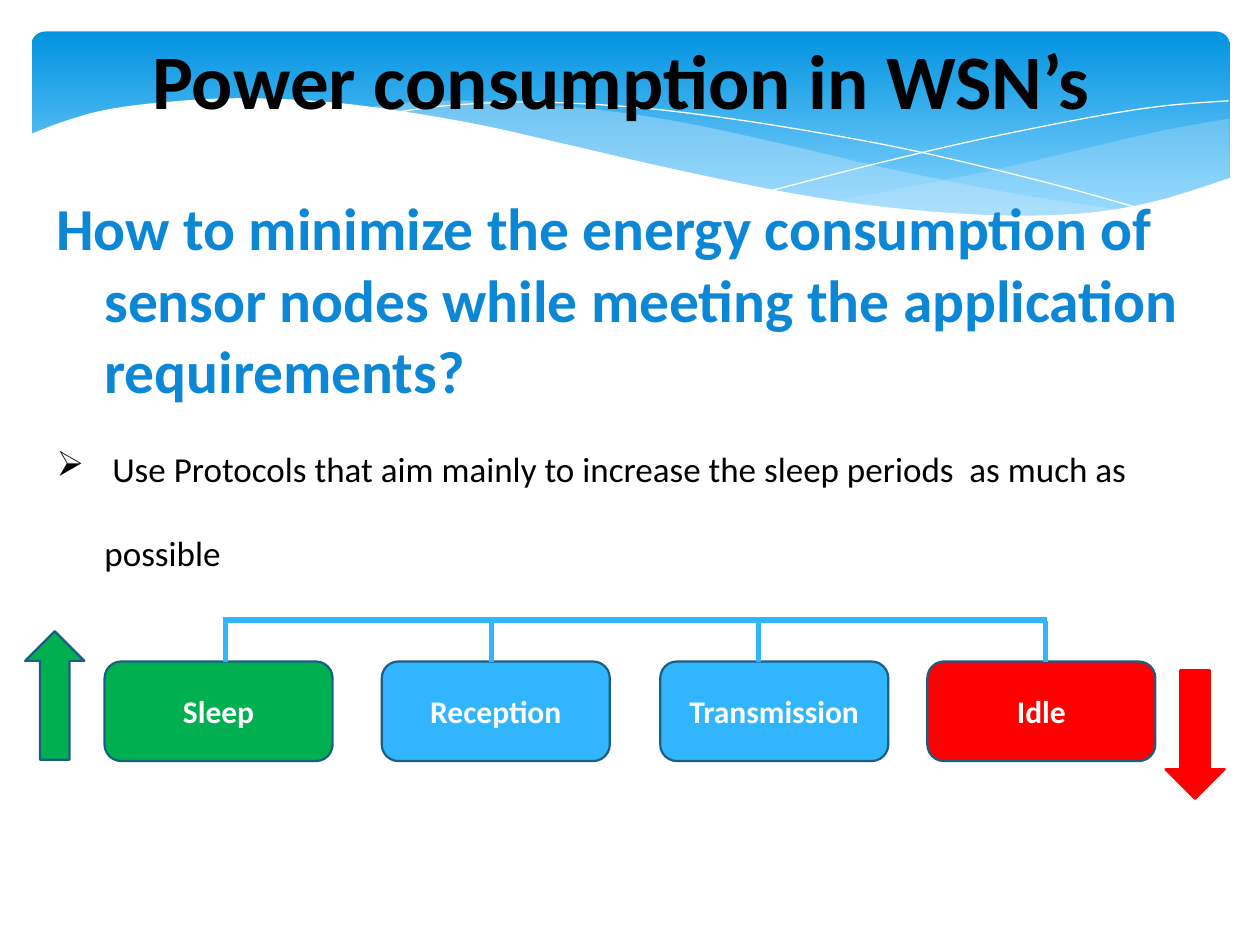
import pptx
import pptx.util
import pptx.dml.color
import pptx.enum.shapes
import pptx.enum.text
import pptx.oxml
import pptx.oxml.ns

THEME = {
    "font": "Calibri",
    "black": "000000", "white": "FFFFFF", "heading": "0B87D6",
    "sky": "31B6FD", "outline": "195F84", "green": "00B050", "red": "FF0000",
    "band_top": "0293E0", "band_bottom": "83D3FE", "wave": "C6E7FC",
    "title": 44, "question": 34, "body": 20, "label": 18,
}
SHAPE = pptx.enum.shapes.MSO_SHAPE
ALIGN = pptx.enum.text.PP_ALIGN
ANCHOR = pptx.enum.text.MSO_ANCHOR
RGB = pptx.dml.color.RGBColor.from_string
Pt = pptx.util.Pt

prs = pptx.Presentation()
prs.slide_width, prs.slide_height = pptx.util.Inches(10), pptx.util.Inches(7.5)
U = prs.slide_width // 100  # grid of 100 columns by 75 rows
s = prs.slides.add_slide(prs.slide_layouts[6])


def smooth(points, steps=6):
    """Catmull-Rom curve through grid points."""
    pts = [points[0], *points, points[-1]]
    curve = [points[0]]
    for a, b, c, d in zip(pts, pts[1:], pts[2:], pts[3:]):
        for t in (i / steps for i in range(1, steps + 1)):
            curve.append(tuple(
                (2 * q + (r - p) * t + (2 * p - 5 * q + 4 * r - v) * t ** 2
                 + (3 * q - p - 3 * r + v) * t ** 3) / 2
                for p, q, r, v in zip(a, b, c, d)))
    return curve


def write(p, text, size, color, bold=True):
    r = p.add_run()
    r.text = text
    r.font.color.rgb = RGB(THEME[color])
    for key, value in {"name": THEME["font"], "size": Pt(THEME[size]), "bold": bold}.items():
        setattr(r.font, key, value)


# Header band
band = s.shapes.add_shape(SHAPE.ROUNDED_RECTANGLE, *(int(v * U) for v in (2.5, 2.5, 95.1, 15.6)))
band.adjustments[0] = 0.07
band.shadow.inherit = False
band.line.fill.background()
band.fill.gradient()
band.fill.gradient_angle = 270
for stop, color, position in zip(band.fill.gradient_stops, ("band_top", "band_bottom"), (0, 0.9)):
    stop.color.rgb = RGB(THEME[color])
    stop.position = position

# Waves over the band: curved edges, fill and opacity in percent (no fill: a thin line)
waves = [
    ([[(97.6, 9.4), (92.1, 10.4), (86.1, 11.8), (77.9, 13.7), (66.1, 16)],
      [(66.1, 16), (73.2, 16.8), (81.4, 17.2), (88.1, 16.7), (92.8, 15.8), (97.6, 14.1)]],
     "wave", 29),
    ([[(89.3, 16.7), (80.7, 15.4), (70.6, 13.4), (62.9, 11.6), (54.1, 9.7), (46.5, 8.6),
       (38, 8), (32.8, 8.1), (28.6, 8.6)],
      [(28.6, 8.6), (36.2, 9.7), (44.9, 11.6), (56.6, 14.3), (66.5, 16.1), (74.8, 17),
       (81.8, 17.3), (89.3, 16.7)]], "wave", 40),
    ([[(30.9, 9), (35.3, 8.4), (41.6, 8.1), (48.9, 8.4), (55.6, 9.1), (63.6, 10.3),
       (72.7, 12), (83.1, 14.5), (90.7, 16.6)]], None, 0),
    ([[(61.3, 15.1), (69.5, 13), (77.6, 11.1), (86.6, 9.3), (92.4, 8.4), (97.5, 8)]], None, 0),
    ([[(97.7, 14.1), (92, 15.9), (86.3, 16.9), (79.3, 17.1), (70.8, 16.5), (62.6, 15.3),
       (52.9, 13.3), (44.7, 11.4), (36.5, 9.6), (27.1, 8.2), (19.3, 7.8), (13.2, 8.1),
       (8.5, 8.7), (5.2, 9.6), (2.3, 10.7)],
      [(2.3, 10.7), (2.3, 22.4)], [(2.3, 22.4), (97.7, 22.4)]], "white", 100),
]
for edges, color, opacity in waves:
    outline = [(int(x * U), int(y * U)) for edge in edges for x, y in smooth(edge)]
    fb = s.shapes.build_freeform(*outline[0])
    fb.add_line_segments(outline[1:], close=color is not None)
    sp = fb.convert_to_shape()
    sp.shadow.inherit = False
    if color is None:
        sp.fill.background()
        sp.line.color.rgb = RGB(THEME["white"])
        sp.line.width = Pt(0)
        continue
    sp.line.fill.background()
    sp.fill.solid()
    sp.fill.fore_color.rgb = RGB(THEME[color])
    if opacity < 100:
        clr = sp._element.spPr.find(".//" + pptx.oxml.ns.qn("a:srgbClr"))
        clr.append(pptx.oxml.parse_xml(
            f'<a:alpha {pptx.oxml.ns.nsdecls("a")} val="{opacity * 1000}"/>'))

# Question and bullet
tf = s.shapes.add_textbox(*(int(v * U) for v in (3.5, 14.7, 96.5, 31.6))).text_frame
tf.word_wrap = True
question, bullet = tf.paragraphs[0], tf.add_paragraph()
write(question, "How to minimize the energy consumption of sensor nodes while meeting "
      "the application requirements?", "question", "heading")
write(bullet, " Use Protocols that aim mainly to increase the sleep periods  as much as possible",
      "body", "black", bold=False)
bullet.line_spacing = 2.0
for p in (question, bullet):
    pPr = p._p.get_or_add_pPr()
    pPr.set("marL", str(int(3.8 * U)))
    pPr.set("indent", str(int(-3.8 * U)))
pPr.append(pptx.oxml.parse_xml(f'<a:buChar {pptx.oxml.ns.nsdecls("a")} char="➢"/>'))

# Title
tf = s.shapes.add_textbox(*(int(v * U) for v in (9.2, 2.1, 80.2, 8.4))).text_frame
tf.word_wrap = False
tf.paragraphs[0].alignment = ALIGN.CENTER
write(tf.paragraphs[0], "Power consumption in WSN’s", "title", "black")

# State boxes and arrows: shape, left, top, width, height, fill, line, label
BOX, BOX_TOP = (18.1, 7.9), 52.5
ARROW = (4.7, 10.2)
parts = [
    (SHAPE.ROUNDED_RECTANGLE, 8.3, BOX_TOP, *BOX, "green", "outline", "Sleep"),
    (SHAPE.ROUNDED_RECTANGLE, 30.3, BOX_TOP, *BOX, "sky", "outline", "Reception"),
    (SHAPE.ROUNDED_RECTANGLE, 52.4, BOX_TOP, *BOX, "sky", "outline", "Transmission"),
    (SHAPE.ROUNDED_RECTANGLE, 73.6, BOX_TOP, *BOX, "red", "outline", "Idle"),
    (SHAPE.UP_ARROW, 2, 50.1, *ARROW, "green", "outline", None),
    (SHAPE.DOWN_ARROW, 92.5, 53.2, *ARROW, "red", "red", None),
]
for kind, *place, fill, line, label in parts:
    sp = s.shapes.add_shape(kind, *(int(v * U) for v in place))
    sp.shadow.inherit = False
    sp.fill.solid()
    sp.fill.fore_color.rgb = RGB(THEME[fill])
    sp.line.color.rgb = RGB(THEME[line])
    sp.line.width = Pt(1.25)
    if label:
        sp.text_frame.vertical_anchor = ANCHOR.MIDDLE
        sp.text_frame.paragraphs[0].alignment = ALIGN.CENTER
        write(sp.text_frame.paragraphs[0], label, "label", "white")

# Bracket: one rail and a drop to each box
RAIL = 49.2
drops = [(x, RAIL + 0.1, x, BOX_TOP) for x in (17.9, 39, 60.2, 83)]
for ends in [(17.7, RAIL, 83.1, RAIL), *drops]:
    c = s.shapes.add_connector(pptx.enum.shapes.MSO_CONNECTOR.STRAIGHT, *(int(v * U) for v in ends))
    c.line.color.rgb = RGB(THEME["sky"])
    c.line.width = Pt(3)
    c._element.spPr.append(pptx.oxml.parse_xml(f'<a:effectLst {pptx.oxml.ns.nsdecls("a")}/>'))

prs.save("out.pptx")
